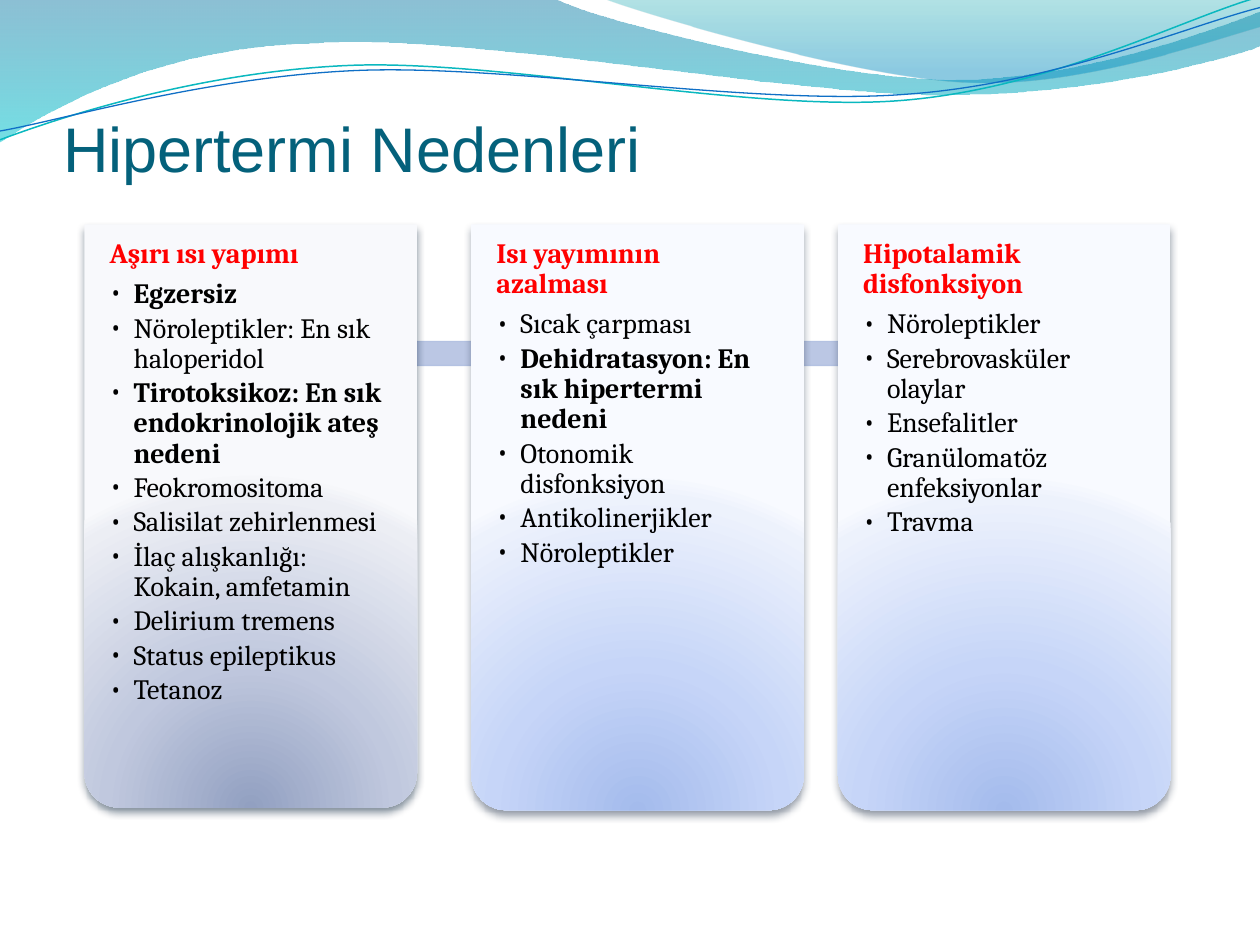
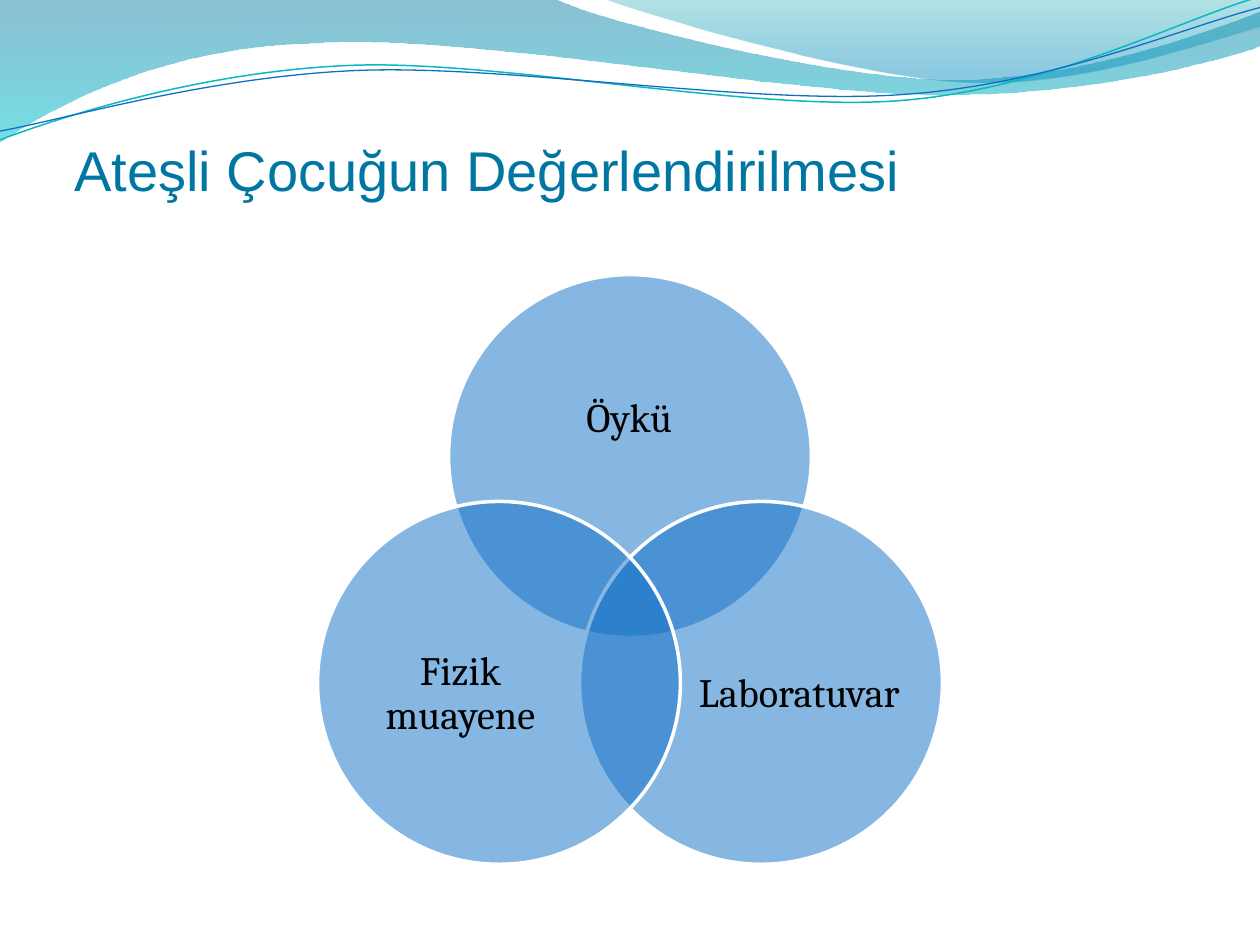
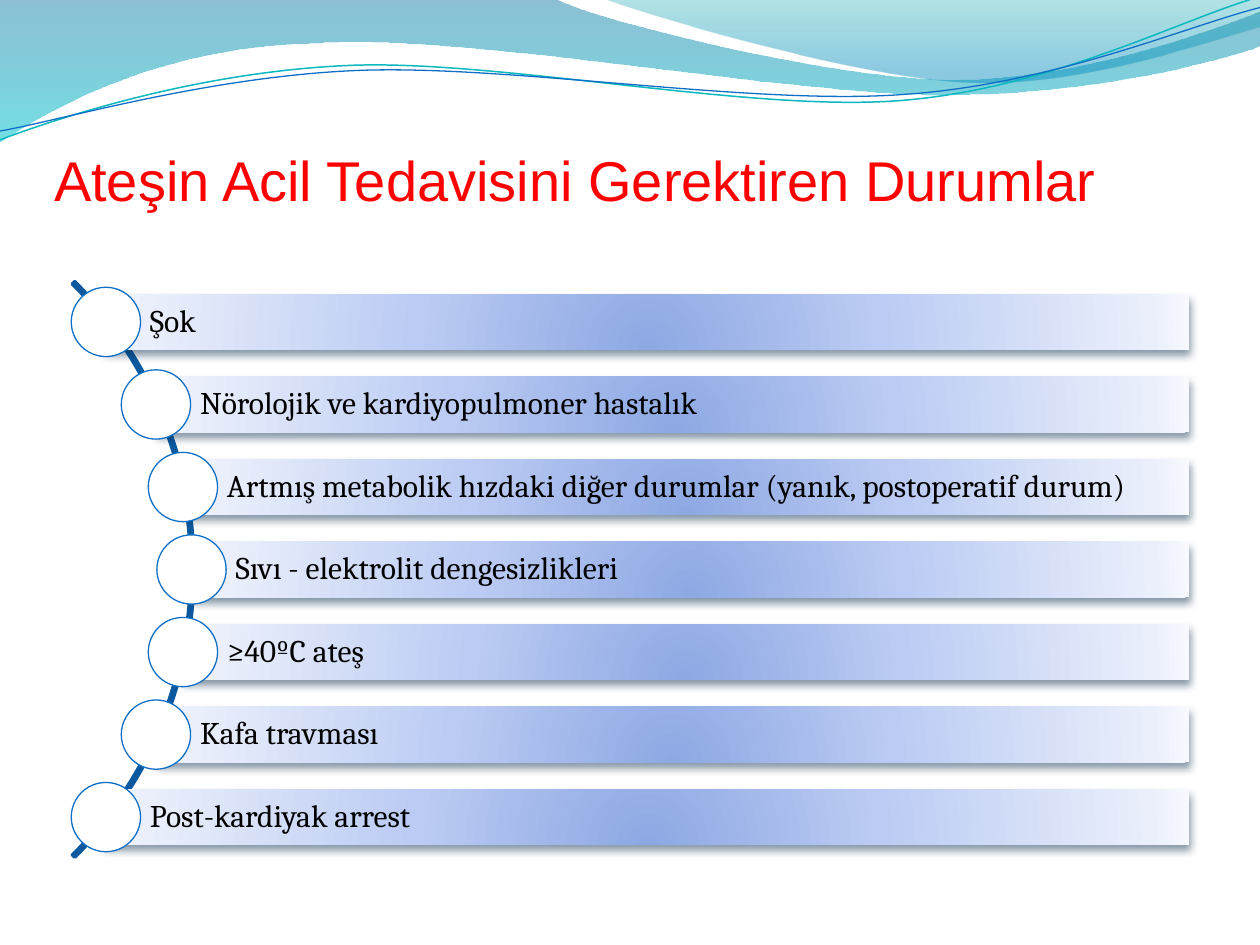
from math import sqrt

from pptx import Presentation
from pptx.dml.color import RGBColor
from pptx.enum import shapes, text
from pptx.oxml import ns, parse_xml
from pptx.util import Inches, Pt

BLUE, WHITE, BLACK, RED = "0F6FC6", "FFFFFF", "000000", "FF0000"
HEAD_FONT, BODY_FONT = "Arial", "Cambria"
FOCUS_LOW = '<a:path path="circle"><a:fillToRect l="50000" t="130000" r="50000" b="-30000"/></a:path>'
DOWNWARD = '<a:lin ang="5400000" scaled="0"/>'

# Each wave: start point, then line ends (2 numbers) or Bezier curves (6 numbers).
BANDS = [
    ([(0, 0), (4.4, -0.01), (4.76, 0.17, 6.64, 0.63, 7.58, 0.63),
      (8.53, 0.63, 9.58, 0.26, 10, 0.09), (10.01, 0.36),
      (9.83, 0.44, 8.7, 0.76, 7.46, 0.75), (6.22, 0.75, 3.82, 0.28, 2.57, 0.34),
      (1.29, 0.36, 0.46, 0.83, -0.01, 1.13), (0, 0)],
     [(0, "0074A1", 45), (100, "00C6CF", 55)]),
    ([(4.79, -0.01), (5.09, 0.11, 6.82, 0.62, 7.69, 0.65),
      (8.56, 0.69, 9.61, 0.32, 10, 0.21), (10, 0), (4.79, -0.01)],
     [(0, "00A1A9", 30), (80, "008BBF", 45)]),
]
THREADS = [
    ([(0, 1.11), (0.48, 0.93, 1.58, 0.57, 2.77, 0.52), (3.95, 0.47, 5.93, 0.89, 7.13, 0.8),
      (8.33, 0.71, 9.38, 0.15, 9.98, -0.02)], "0AB8BF", 0.85),
    ([(0, 1.04), (0.47, 0.96, 1.64, 0.61, 2.83, 0.56), (4.03, 0.51, 5.97, 0.84, 7.17, 0.75),
      (8.36, 0.67, 9.41, 0.21, 10, 0.06)], BLUE, 0.75),
]

GREY_CARD = [(0, "92A0C1"), (43, "C0C8DE"), (93, "ECEEF4"), (100, "F8F9FC")]
BLUE_CARD = [(0, "A4BBEC"), (43, "C6D5F8"), (93, "EDF2FC"), (100, "F8FAFF")]
ROW_BAR = [(0, "8DA8E3"), (43, "BBCBF3"), (93, "EAEFFB"), (100, "F7F9FF")]

CAUSES = [
    (0.67, 4.63, GREY_CARD, "031D35", "Aşırı ısı yapımı",
     ["Egzersiz", "Nöroleptikler: En sık haloperidol",
      "Tirotoksikoz: En sık endokrinolojik ateş nedeni", "Feokromositoma",
      "Salisilat zehirlenmesi", "İlaç alışkanlığı: Kokain, amfetamin",
      "Delirium tremens", "Status epileptikus", "Tetanoz"]),
    (3.74, 4.65, BLUE_CARD, "26354C", "Isı yayımının azalması",
     ["Sıcak çarpması", "Dehidratasyon: En sık hipertermi nedeni",
      "Otonomik disfonksiyon", "Antikolinerjikler", "Nöroleptikler"]),
    (6.65, 4.65, BLUE_CARD, "26354C", "Hipotalamik disfonksiyon",
     ["Nöroleptikler", "Serebrovasküler olaylar", "Ensefalitler",
      "Granülomatöz enfeksiyonlar", "Travma"]),
]
EMPHASISED = {"Egzersiz", "Tirotoksikoz: En sık endokrinolojik ateş nedeni",
              "Dehidratasyon: En sık hipertermi nedeni"}

# Circle left and top, then the label and its box.
ASSESSMENT = [
    (3.56, 2.18, "Öykü", (3.94, 2.68, 2.11, 1.3)),
    (4.6, 3.98, "Laboratuvar", (5.48, 4.72, 1.73, 1.58)),
    (2.52, 3.98, "Fizik muayene", (2.79, 4.72, 1.73, 1.58)),
]
EMERGENCIES = [
    "Şok", "Nörolojik ve kardiyopulmoner hastalık",
    "Artmış metabolik hızdaki diğer durumlar (yanık, postoperatif durum)",
    "Sıvı - elektrolit dengesizlikleri", "≥40ºC ateş", "Kafa travması",
    "Post-kardiyak arrest",
]


def rgb(code):
    return RGBColor.from_string(code)


def assign(target, **values):
    for key, value in values.items():
        setattr(target, key, value)


def color_xml(code, alpha=100):
    return f'<a:srgbClr val="{code}"><a:alpha val="{alpha * 1000}"/></a:srgbClr>'


def replace_fill(shape, xml):
    """Swap the shape's fill for one with transparency or several stops."""
    shape.fill.background()
    old = shape._element.spPr.find(ns.qn("a:noFill"))
    old.getparent().replace(old, parse_xml(xml))


def fill_gradient(shape, stops, direction):
    marks = "".join(f'<a:gs pos="{pos * 1000}">{color_xml(*color)}</a:gs>' for pos, *color in stops)
    replace_fill(shape, f'<a:gradFill {ns.nsdecls("a")} rotWithShape="1">'
                        f'<a:gsLst>{marks}</a:gsLst>{direction}</a:gradFill>')


def fill_solid(shape, code, alpha=100):
    replace_fill(shape, f'<a:solidFill {ns.nsdecls("a")}>{color_xml(code, alpha)}</a:solidFill>')


def outline(shape, code=None, width=0.75):
    shape.shadow.inherit = False
    if code is None:
        shape.line.fill.background()
    else:
        shape.line.color.rgb = rgb(code)
        shape.line.width = Pt(width)


def drop_shadow(shape, code):
    shape._element.spPr.find(ns.qn("a:effectLst")).append(parse_xml(
        f'<a:outerShdw {ns.nsdecls("a")} blurRad="57150" dist="38100" dir="5400000" '
        f'rotWithShape="0">{color_xml(code, 48)}</a:outerShdw>'))


def add_shape(slide, kind, box, line=None, width=0.75):
    shape = slide.shapes.add_shape(kind, *map(Inches, box))
    outline(shape, line, width)
    return shape


def set_frame(frame, insets, anchor):
    names = ("margin_left", "margin_top", "margin_right", "margin_bottom")
    assign(frame, word_wrap=True, auto_size=text.MSO_AUTO_SIZE.NONE, vertical_anchor=anchor,
           **dict(zip(names, map(Inches, insets))))


def add_text(slide, box, insets, anchor):
    frame = slide.shapes.add_textbox(*map(Inches, box)).text_frame
    set_frame(frame, insets, anchor)
    return frame


def write(paragraph, words, size, color, font=BODY_FONT, bold=False, **layout):
    paragraph.text = words
    assign(paragraph, **layout)
    assign(paragraph.font, size=Pt(size), name=font, bold=bold)
    paragraph.font.color.rgb = rgb(color)


def add_bullet(paragraph):
    paragraph.level = 1
    props = paragraph._p.get_or_add_pPr()
    props.set("marL", str(Inches(0.19)))
    props.set("indent", str(Inches(-0.19)))
    for tag in (f'buFont {ns.nsdecls("a")} typeface="{BODY_FONT}"',
                f'buChar {ns.nsdecls("a")} char="•"'):
        props.append(parse_xml(f"<a:{tag}/>"))


def add_wave(slide, steps, close):
    """A freeform whose six-number steps become true Bezier curves."""
    (left, top), *rest = steps
    corners = [(Inches(x), Inches(y)) for step in rest for x, y in zip(step[::2], step[1::2])]
    builder = slide.shapes.build_freeform(Inches(left), Inches(top))
    builder.add_line_segments(corners, close=close)
    wave = builder.convert_to_shape()
    segments = iter(list(wave._element.iter(ns.qn("a:lnTo"))))
    for step in rest:
        segment = next(segments)
        if len(step) == 6:
            curve = parse_xml(f'<a:cubicBezTo {ns.nsdecls("a")}/>')
            segment.addprevious(curve)
            for line in (segment, next(segments), next(segments)):
                curve.append(line[0])
                line.getparent().remove(line)
    return wave


def move_waves_to_layout(slide):
    """Draw the waves and hand them to the layout, so that every slide shows them."""
    waves = []
    for steps, stops in BANDS:
        band = add_wave(slide, steps, True)
        fill_gradient(band, stops, DOWNWARD)
        outline(band)
        waves.append(band)
    for steps, color, width in THREADS:
        thread = add_wave(slide, steps, False)
        thread.fill.background()
        outline(thread, color, width)
        waves.append(thread)
    tree = slide.slide_layout.shapes.element
    for order, wave in enumerate(waves):
        wave._element.nvSpPr.cNvPr.set("id", str(20 + order))
        tree.insert(2 + order, wave._element)


def add_titled_slide(deck, words, box, size, color):
    slide = deck.slides.add_slide(deck.slide_layouts[5])
    title = slide.shapes.title
    assign(title, **dict(zip(("left", "top", "width", "height"), map(Inches, box))))
    set_frame(title.text_frame, (0, 0.05, 0, 0), text.MSO_ANCHOR.BOTTOM)
    write(title.text_frame.paragraphs[0], words, size, color, HEAD_FONT,
          alignment=text.PP_ALIGN.LEFT)
    return slide


def add_cause_card(slide, box, stops, shadow, heading, causes):
    left, top, width, height = box
    card = add_shape(slide, shapes.MSO_SHAPE.ROUND_2_SAME_RECTANGLE, box)
    card.rotation = 180
    card.adjustments[0] = 0.105
    fill_gradient(card, stops, FOCUS_LOW)
    drop_shadow(card, shadow)
    frame = add_text(slide, (left + 0.08, top, width - 0.16, height - 0.08),
                     (0.12, 0.12, 0.15, 0.12), text.MSO_ANCHOR.TOP)
    write(frame.paragraphs[0], heading, 16, RED, bold=True, line_spacing=0.9, space_after=Pt(5.6))
    for cause in causes:
        item = frame.add_paragraph()
        add_bullet(item)
        write(item, cause, 16, BLACK, bold=cause in EMPHASISED,
              line_spacing=0.9, space_after=Pt(2.4))


def fill_causes(slide):
    link = add_shape(slide, shapes.MSO_SHAPE.ROUNDED_RECTANGLE, (1.14, 2.71, 7.56, 0.19), "B4C2E2")
    link.adjustments[0] = 0.1
    fill_solid(link, "B4C2E2", 90)
    for left, height, *content in CAUSES:
        add_cause_card(slide, (left, 1.78, 2.64, height), *content)


def fill_assessment(slide, diameter=2.88):
    for left, top, label, label_box in ASSESSMENT:
        circle = add_shape(slide, shapes.MSO_SHAPE.OVAL, (left, top, diameter, diameter), WHITE, 2)
        fill_solid(circle, BLUE, 50)
        frame = add_text(slide, label_box, [0] * 4, text.MSO_ANCHOR.MIDDLE)
        write(frame.paragraphs[0], label, 23, BLACK, line_spacing=0.9,
              alignment=text.PP_ALIGN.CENTER)


def add_emergency_row(slide, x, y, right, words):
    """A bar from the dot's centre (x, y) to the right edge, with the dot on top."""
    bar_height, dot = 0.44, 0.55
    box = (x, y - bar_height / 2, right - x, bar_height)
    bar = add_shape(slide, shapes.MSO_SHAPE.RECTANGLE, box)
    fill_gradient(bar, ROW_BAR, FOCUS_LOW)
    drop_shadow(bar, "042747")
    frame = add_text(slide, box, (0.35, 0.05, 0.05, 0.05), text.MSO_ANCHOR.MIDDLE)
    write(frame.paragraphs[0], words, 18, BLACK, line_spacing=0.9)
    marker = add_shape(slide, shapes.MSO_SHAPE.OVAL, (x - dot / 2, y - dot / 2, dot, dot), BLUE)
    fill_solid(marker, WHITE)


def fill_emergencies(slide):
    arc_x, center_y, arc_radius = -1.69, 4.52, 3.23
    dots_x, dots_radius = -1.66, 3.18
    arc = add_shape(slide, shapes.MSO_SHAPE.BLOCK_ARC,
                    (arc_x - arc_radius, center_y - arc_radius, 2 * arc_radius, 2 * arc_radius),
                    "0C599F", 2)
    arc.fill.background()
    for index, value in enumerate((189, 27, 0.004)):
        arc.adjustments[index] = value
    last = len(EMERGENCIES) - 1
    for row, words in enumerate(EMERGENCIES):
        rise = (row / last - 0.5) * 3.93
        add_emergency_row(slide, dots_x + sqrt(dots_radius ** 2 - rise ** 2),
                          center_y + rise, 9.44, words)


def main():
    deck = Presentation()
    assign(deck, slide_width=Inches(10), slide_height=Inches(7.5))
    causes = add_titled_slide(deck, "Hipertermi Nedenleri", (0.5, 0.77, 9, 0.7), 36, "04617B")
    move_waves_to_layout(causes)
    fill_causes(causes)
    fill_assessment(add_titled_slide(
        deck, "Ateşli Çocuğun Değerlendirilmesi", (0.59, 0.36, 9, 1.25), 32, "0076A3"))
    fill_emergencies(add_titled_slide(
        deck, "Ateşin Acil Tedavisini Gerektiren Durumlar", (0.43, 0.44, 9, 1.25), 32, RED))
    deck.save("out.pptx")


if __name__ == "__main__":
    main()
